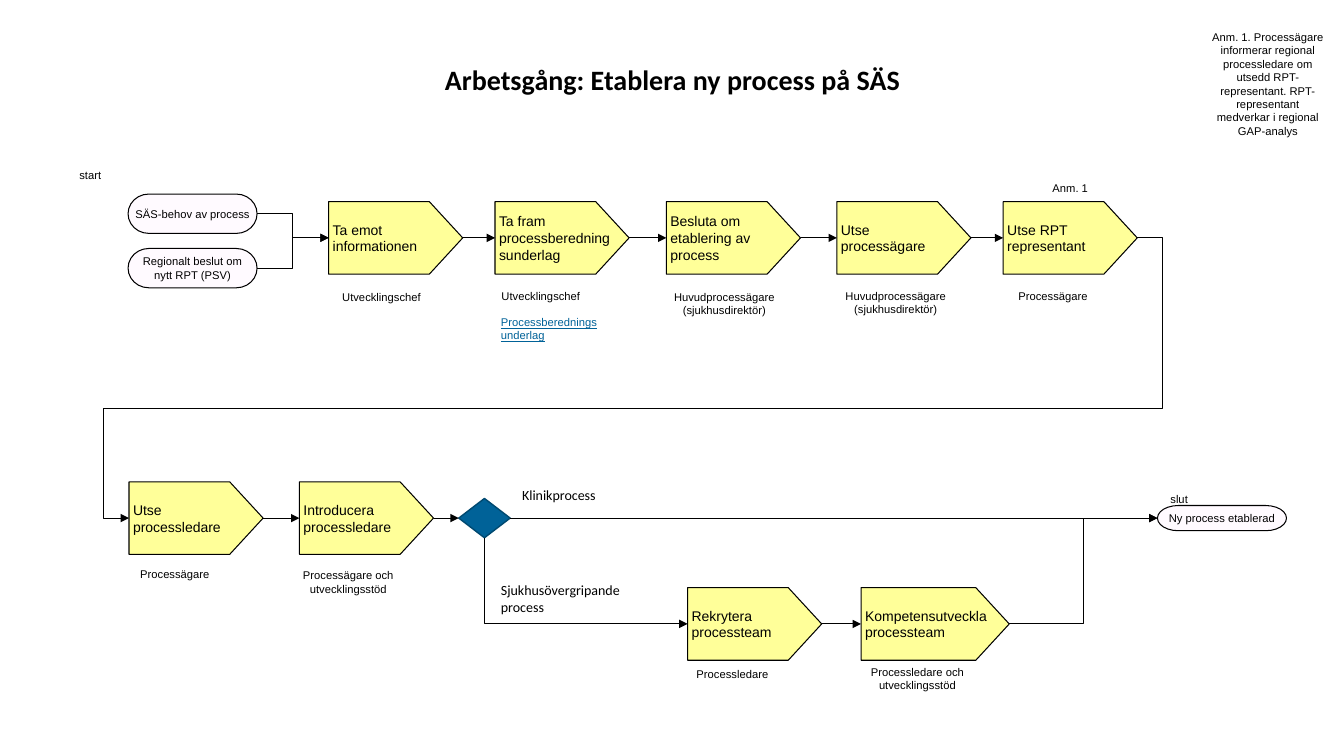
from lxml import etree
from pptx import Presentation
from pptx.dml.color import RGBColor
from pptx.enum.shapes import MSO_CONNECTOR, MSO_SHAPE
from pptx.enum.text import MSO_ANCHOR, PP_ALIGN
from pptx.oxml.ns import qn
from pptx.util import Inches, Pt

STRAIGHT, ELBOW = MSO_CONNECTOR.STRAIGHT, MSO_CONNECTOR.ELBOW
PLATE, TERMINATOR = MSO_SHAPE.PENTAGON, MSO_SHAPE.FLOWCHART_TERMINATOR
DECISION = MSO_SHAPE.FLOWCHART_DECISION
TOP, MIDDLE = MSO_ANCHOR.TOP, MSO_ANCHOR.MIDDLE
LEFT, CENTER = PP_ALIGN.LEFT, PP_ALIGN.CENTER
LEFT_SIDE, BOTTOM_SIDE, RIGHT_SIDE = 1, 2, 3

COLORS = {"black": "000000", "step": "FFFF99", "terminal": "FFF7FF",
          "blue": "006298", "blue line": "004970"}
ROW_1, ROW_2, ROW_3 = 2.36, 5.14, 6.19  # vertical centres of the flow rows
STEP_WIDTH, STEP_HEIGHT = 1.33, 0.72

TITLE = "Arbetsgång: Etablera ny process på SÄS"

# key: text, left, centre, width
STEPS = {
    "receive": ("Ta emot informationen", 3.26, ROW_1, STEP_WIDTH),
    "prepare": ("Ta fram processberedningsunderlag", 4.91, ROW_1, STEP_WIDTH),
    "decide": ("Besluta om etablering av process", 6.61, ROW_1, STEP_WIDTH),
    "owner": ("Utse processägare", 8.3, ROW_1, STEP_WIDTH),
    "regional": ("Utse RPT representant", 9.95, ROW_1, STEP_WIDTH),
    "leader": ("Utse processledare", 1.28, ROW_2, STEP_WIDTH),
    "introduce": ("Introducera processledare", 2.97, ROW_2, STEP_WIDTH),
    "recruit": ("Rekrytera processteam", 6.82, ROW_3, STEP_WIDTH),
    "develop": ("Kompetensutveckla processteam", 8.54, ROW_3, 1.47),
}
# key: text, left, centre, height
TERMINALS = {
    "need": ("SÄS-behov av process", 1.27, 2.12, 0.39),
    "decision made": ("Regionalt beslut om nytt RPT (PSV)", 1.27, 2.66, 0.39),
    "done": ("Ny process etablerad", 11.48, ROW_2, 0.25),
}
# text, left, top, width, height
CAPTIONS = [
    ("start", 0.52, 1.67, 0.75, 0.13),
    ("slut", 11.32, 4.88, 0.75, 0.13),
    ("Anm. 1", 10.03, 1.8, 1.17, 0.13),
    ("Utvecklingschef", 3.2, 2.88, 1.17, 0.13),
    ("Utvecklingschef", 4.78, 2.87, 1.17, 0.13),
    ("Huvudprocessägare (sjukhusdirektör)", 6.6, 2.88, 1.17, 0.27),
    ("Huvudprocessägare (sjukhusdirektör)", 8.3, 2.87, 1.17, 0.27),
    ("Processägare", 9.86, 2.87, 1.17, 0.13),
    ("Processägare", 1.15, 5.63, 1.17, 0.13),
    ("Processägare och utvecklingsstöd", 2.87, 5.64, 1.17, 0.27),
    ("Processledare", 6.68, 6.62, 1.17, 0.13),
    ("Processledare och utvecklingsstöd", 8.46, 6.6, 1.28, 0.27),
    ("Anm. 1. Processägare informerar regional processledare om utsedd "
     "RPT-representant. RPT-representant medverkar i regional GAP-analys",
     11.99, 0.3, 1.17, 1.08),
]
BRANCHES = [
    ("Klinikprocess", 5.08, 4.78, 1.83, 0.27),
    ("Sjukhusövergripande process", 4.87, 5.72, 1.4, 0.44),
]
DOCUMENT = ("Processberedningsunderlag", 4.87, 3.08, 1.2, 0.37)

STRAIGHT_ARROWS = [
    ("receive", "prepare"), ("prepare", "decide"), ("decide", "owner"),
    ("owner", "regional"), ("leader", "introduce"), ("introduce", "choice"),
    ("choice", "done"), ("recruit", "develop"),
]
ELBOW_ARROWS = [("need", "receive"), ("decision made", "receive"), ("develop", "done")]
ROW_CHANGE = (-2500, 60900, 102500)  # bends between the rows, in 1/1000 percent


def color(name):
    return RGBColor.from_string(COLORS[name])


def write(shape, text, size=8, font="Arial", ink="black", bold=False, underline=False,
          align=LEFT, anchor=TOP, insets=(0, 0, 0, 0), spacing=None):
    frame = shape.text_frame
    frame.word_wrap = True
    frame.vertical_anchor = anchor
    (frame.margin_left, frame.margin_top,
     frame.margin_right, frame.margin_bottom) = [Inches(inset) for inset in insets]
    para = frame.paragraphs[0]
    para.alignment = align
    if spacing:
        para.line_spacing = spacing
    span = para.add_run()
    span.text = text
    span.font.size = Pt(size)
    span.font.name = font
    span.font.bold = bold
    span.font.underline = underline
    span.font.color.rgb = color(ink)


def add_label(text, left, top, width, height, **text_format):
    box = page.shapes.add_textbox(*map(Inches, (left, top, width, height)))
    write(box, text, **text_format)


def add_node(kind, left, centre, width, height, fill, line="black", weight=0.75):
    node = page.shapes.add_shape(
        kind, *map(Inches, (left, centre - height / 2, width, height)))
    node.shadow.inherit = False
    node.fill.solid()
    node.fill.fore_color.rgb = color(fill)
    node.line.color.rgb = color(line)
    node.line.width = Pt(weight)
    return node


def add_arrow(kind, start, start_side, finish, finish_side, arrow_end="tailEnd"):
    arrow = page.shapes.add_connector(kind, 0, 0, 0, 0)
    arrow.begin_connect(nodes[start], start_side)
    arrow.end_connect(nodes[finish], finish_side)
    arrow.line.color.rgb = color("black")
    arrow.line.width = Pt(0.75)
    etree.SubElement(arrow.line._get_or_add_ln(), qn("a:" + arrow_end), type="triangle")
    etree.SubElement(arrow._element.spPr, qn("a:effectLst"))
    return arrow


def set_route(arrow, preset, bends=()):
    geometry = arrow._element.spPr.find(qn("a:prstGeom"))
    geometry.set("prst", preset)
    guides = geometry.find(qn("a:avLst"))
    for number, bend in enumerate(bends, 1):
        etree.SubElement(guides, qn("a:gd"), name=f"adj{number}", fmla=f"val {bend}")


deck = Presentation()
deck.slide_width, deck.slide_height = Inches(13.33), Inches(7.5)
page = deck.slides.add_slide(deck.slide_layouts[6])
nodes = {}

# Title
add_label(TITLE, 0.78, 0.05, 11.78, 1.51, size=20, font="Calibri", bold=True,
          align=CENTER, anchor=MIDDLE, spacing=0.9)

# Process steps
for key, (text, left, centre, width) in STEPS.items():
    nodes[key] = add_node(PLATE, left, centre, width, STEP_HEIGHT, "step")
    nodes[key].adjustments[0] = 0.46
    write(nodes[key], text, size=10, anchor=MIDDLE, insets=(0.04, 0, 0, 0))

# Start and end points
for key, (text, left, centre, height) in TERMINALS.items():
    nodes[key] = add_node(TERMINATOR, left, centre, 1.28, height, "terminal")
    fill_color = nodes[key]._element.spPr.find(qn("a:solidFill"))[0]
    etree.SubElement(fill_color, qn("a:alpha"), val="50000")
    write(nodes[key], text, align=CENTER, anchor=MIDDLE)

# Choice of process type
nodes["choice"] = add_node(DECISION, 4.55, ROW_2, 0.51, 0.39, "blue", "blue line", 1)

# Arrows
for start, finish in STRAIGHT_ARROWS:
    add_arrow(STRAIGHT, start, RIGHT_SIDE, finish, LEFT_SIDE)
for start, finish in ELBOW_ARROWS:
    add_arrow(ELBOW, start, RIGHT_SIDE, finish, LEFT_SIDE)
row_arrow = add_arrow(ELBOW, "regional", RIGHT_SIDE, "leader", LEFT_SIDE)
set_route(row_arrow, "bentConnector5", ROW_CHANGE)
branch_arrow = add_arrow(ELBOW, "recruit", LEFT_SIDE, "choice", BOTTOM_SIDE, "headEnd")
set_route(branch_arrow, "bentConnector2")

# Roles, notes and branch names
for caption in CAPTIONS:
    add_label(*caption, align=CENTER)
for branch in BRANCHES:
    add_label(*branch, size=10, font="Calibri", insets=(0.1, 0.05, 0.1, 0.05))
add_label(*DOCUMENT, ink="blue", underline=True, insets=(0.1, 0.05, 0.1, 0.05))

deck.save("out.pptx")
